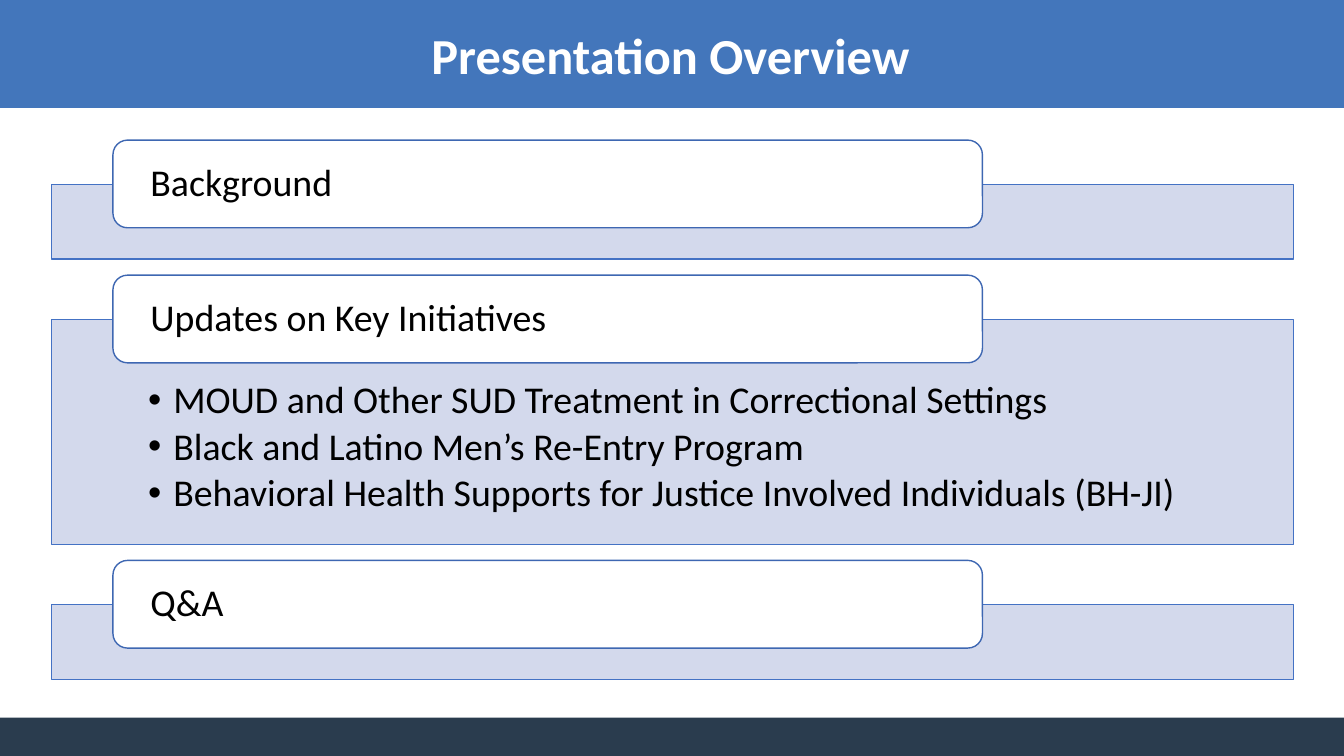
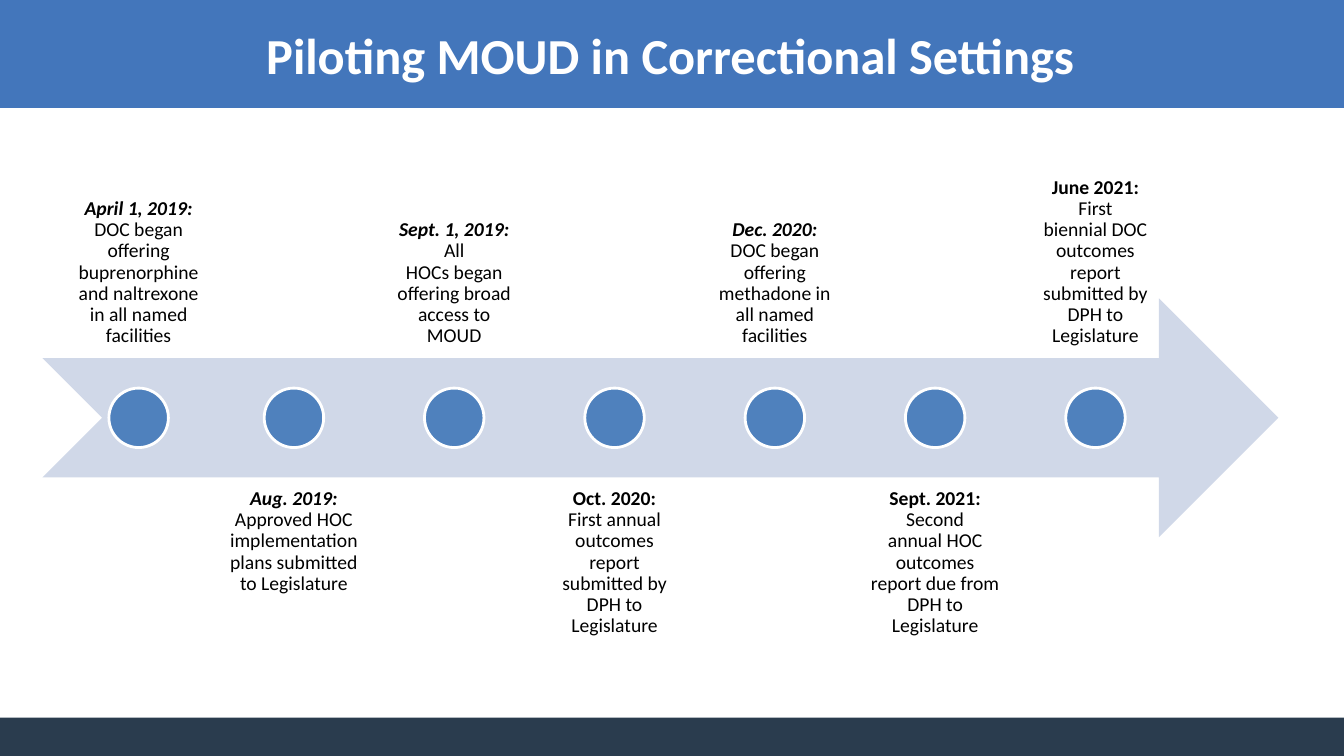
from lxml.etree import SubElement
from pptx import Presentation
from pptx.dml.color import RGBColor
from pptx.enum.shapes import MSO_SHAPE
from pptx.enum.text import MSO_ANCHOR, PP_ALIGN
from pptx.oxml.ns import qn
from pptx.util import Inches, Pt

FONT = "Calibri"
WHITE, BLACK = "FFFFFF", "000000"
TITLE_BLUE, FOOTER_NAVY = "4376BB", "2A3C4E"
PANEL_FILL, PANEL_LINE, CARD_LINE = "CFD5EA", "4472C4", "3E67B2"
ARROW_FILL, DOT_FILL = "D0D8E8", "4F81BD"
SLIDE_WIDTH, SLIDE_HEIGHT = 13.33, 7.5

AGENDA = [
    ("Background", 0.74, []),
    ("Updates on Key Initiatives", 2.23, [
        "MOUD and Other SUD Treatment in Correctional Settings",
        "Black and Latino Men’s Re-Entry Program",
        "Behavioral Health Supports for Justice Involved Individuals (BH-JI)",
    ]),
    ("Q&A", 0.74, []),
]

# Date, whether the date is italic, and the event; a newline forces a line break.
MILESTONES = [
    ("April 1, 2019:", True,
     "DOC began offering buprenorphine and naltrexone in all named facilities"),
    ("Aug. 2019:", True,
     "Approved HOC implementation plans submitted to Legislature"),
    ("Sept. 1, 2019:", True,
     "All\nHOCs began offering broad access to MOUD"),
    ("Oct. 2020:", False,
     "First annual outcomes report submitted by DPH to Legislature"),
    ("Dec. 2020:", True,
     "DOC began offering methadone in all named facilities"),
    ("Sept. 2021:", False,
     "Second\nannual HOC outcomes report due from DPH to Legislature"),
    ("June 2021:", False,
     "First\nbiennial DOC outcomes report submitted by DPH to Legislature"),
]


def color(hex_value):
    return RGBColor.from_string(hex_value)


def add_shape(slide, kind, box, fill, line=None, line_width=1):
    shape = slide.shapes.add_shape(kind, *map(Inches, box))
    shape.shadow.inherit = False
    shape.fill.solid()
    shape.fill.fore_color.rgb = color(fill)
    if line:
        shape.line.color.rgb = color(line)
        shape.line.width = Pt(line_width)
    else:
        shape.line.fill.background()
    return shape


def set_opacity(shape, percent):
    fill_color = shape.element.spPr.find(qn("a:solidFill"))[0]
    SubElement(fill_color, qn("a:alpha"), val=str(percent * 1000))


def set_frame(frame, anchor, insets):
    """Wrap the text, anchor it and set the left, top, right and bottom insets."""
    frame.word_wrap = True
    frame.vertical_anchor = anchor
    (frame.margin_left, frame.margin_top,
     frame.margin_right, frame.margin_bottom) = map(Inches, insets)


def style_paragraph(paragraph, size, font_color=BLACK, bold=None,
                    align=PP_ALIGN.LEFT, line_spacing=0.9):
    paragraph.alignment = align
    paragraph.line_spacing = line_spacing
    paragraph.font.name = FONT
    paragraph.font.size = Pt(size)
    paragraph.font.bold = bold
    paragraph.font.color.rgb = color(font_color)


def add_bullet(paragraph, indent):
    properties = paragraph._p.get_or_add_pPr()
    properties.set("marL", str(Inches(indent)))
    properties.set("indent", str(-Inches(indent)))
    bullet_font = properties.makeelement(qn("a:buFont"), {"typeface": "Arial"})
    bullet = properties.makeelement(qn("a:buChar"), {"char": "•"})
    defaults = properties.find(qn("a:defRPr"))
    defaults.addprevious(bullet_font)
    defaults.addprevious(bullet)


def dress_layout(layout, slide):
    """Give the layout its title box and bands, drawn on the slide and moved."""
    for placeholder in list(layout.placeholders):
        if placeholder.placeholder_format.idx:
            placeholder.element.getparent().remove(placeholder.element)
    title = layout.placeholders[0]
    title.left, title.top, title.width, title.height = map(
        Inches, (0.65, 0.06, 12, 0.96))
    title.text_frame.vertical_anchor = MSO_ANCHOR.MIDDLE
    for top, height, fill in ((0, 1.07, TITLE_BLUE),
                              (SLIDE_HEIGHT - 0.38, 0.38, FOOTER_NAVY)):
        band = add_shape(slide, MSO_SHAPE.RECTANGLE,
                         (0, top, SLIDE_WIDTH, height), fill)
        layout.shapes.element.insert(2, band.element)


def set_title(slide, text):
    title = slide.shapes.title
    title.text_frame.text = text
    style_paragraph(title.text_frame.paragraphs[0], 36, WHITE, True,
                    PP_ALIGN.CENTER, 1.0)


def add_agenda_section(slide, left, top, width, panel_height, heading, bullets):
    """Draw a panel with its heading card on top; return the panel's bottom."""
    panel_top = top + 0.44
    panel = add_shape(slide, MSO_SHAPE.RECTANGLE,
                      (left, panel_top, width, panel_height),
                      PANEL_FILL, PANEL_LINE)
    set_opacity(panel, 90)
    if bullets:
        frame = panel.text_frame
        set_frame(frame, MSO_ANCHOR.TOP, (0.96, 0.61, 0.96, 0.21))
        frame.text = "\n".join(bullets)
        for paragraph in frame.paragraphs:
            style_paragraph(paragraph, 27)
            paragraph.space_after = Pt(4)
            add_bullet(paragraph, 0.25)

    card = add_shape(slide, MSO_SHAPE.ROUNDED_RECTANGLE,
                     (left + 0.61, top, width * 0.7, 0.87), WHITE, CARD_LINE)
    set_frame(card.text_frame, MSO_ANCHOR.MIDDLE, (0.33, 0, 0.33, 0))
    card.text_frame.text = heading
    style_paragraph(card.text_frame.paragraphs[0], 27)
    return panel_top + panel_height


def add_agenda(slide, left, top, width):
    for heading, panel_height, bullets in AGENDA:
        bottom = add_agenda_section(slide, left, top, width, panel_height,
                                    heading, bullets)
        top = bottom + 0.16


def add_milestone_text(slide, box, anchor, date, italic, event):
    frame = slide.shapes.add_textbox(*map(Inches, box)).text_frame
    set_frame(frame, anchor, (0.11,) * 4)
    paragraph = frame.paragraphs[0]
    style_paragraph(paragraph, 14, align=PP_ALIGN.CENTER)
    date_run = paragraph.add_run()
    date_run.text = date
    date_run.font.bold = True
    date_run.font.italic = italic
    for line in event.split("\n"):
        paragraph.add_line_break()
        paragraph.add_run().text = line


def add_timeline(slide, left, top, width, height):
    """Draw the arrow in the box, with texts alternating above and below it."""
    add_shape(slide, MSO_SHAPE.NOTCHED_RIGHT_ARROW,
              (left, top, width, height), ARROW_FILL)
    text_width, dot_size, step = 1.51, 0.59, 1.59
    first_left, second_left = left + 0.2, left + 1.74
    dot_top = top + (height - dot_size) / 2
    for index, (date, italic, event) in enumerate(MILESTONES):
        text_left = second_left + (index - 1) * step if index else first_left
        above = index % 2 == 0
        text_top = top + height * (-0.75 if above else 0.75)
        add_milestone_text(slide, (text_left, text_top, text_width, height),
                           MSO_ANCHOR.BOTTOM if above else MSO_ANCHOR.TOP,
                           date, italic, event)
        dot_left = text_left + (text_width - dot_size) / 2
        add_shape(slide, MSO_SHAPE.OVAL,
                  (dot_left, dot_top, dot_size, dot_size), DOT_FILL, WHITE, 2)


def main():
    presentation = Presentation()
    presentation.slide_width = Inches(SLIDE_WIDTH)
    presentation.slide_height = Inches(SLIDE_HEIGHT)
    layout = presentation.slide_layouts[5]

    overview = presentation.slides.add_slide(layout)
    dress_layout(layout, overview)
    set_title(overview, "Presentation Overview")
    add_agenda(overview, 0.51, 1.39, 12.32)

    pilot = presentation.slides.add_slide(layout)
    set_title(pilot, "Piloting MOUD in Correctional Settings")
    add_timeline(pilot, 0.42, 2.96, 12.26, 2.37)

    presentation.save("out.pptx")


if __name__ == "__main__":
    main()
